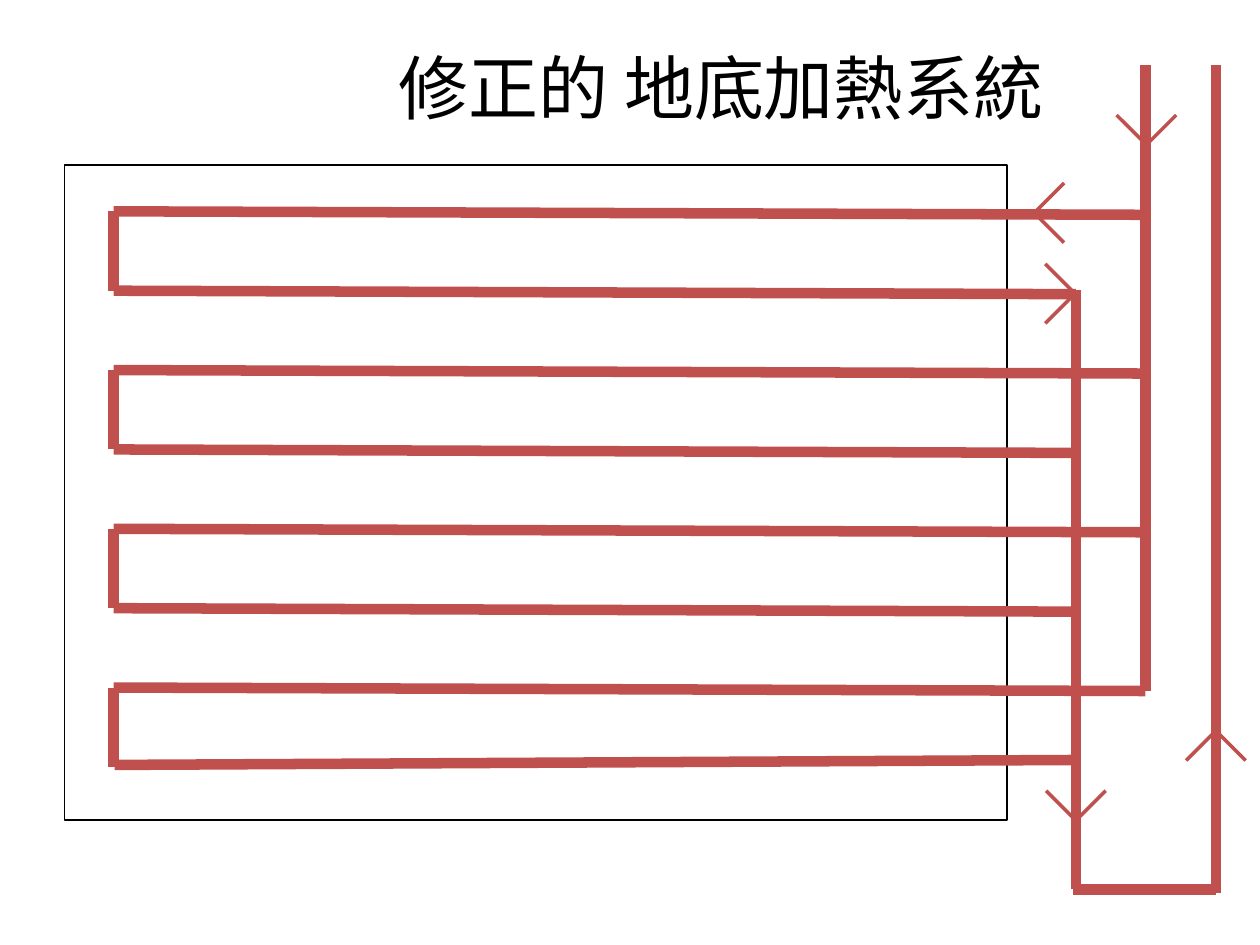
import pptx
import pptx.util
import pptx.dml.color
import pptx.enum.shapes
import pptx.enum.text
import pptx.oxml
import pptx.oxml.ns
from pptx.util import Cm

TITLE = "修正的 地底加熱系統"
FONT = "Noto Sans CJK SC"
HUES = {"pipe": "C0504D", "ink": "000000"}

LEFT, BACK, FEED, RISE = 2.29, 21.69, 23.09, 24.51
TOP, PITCH, DROP, TILT, LOOPS = 4.26, 3.2, 1.6, 0.07, 4
HIGH, LOW = 1.32, 17.93
THICK, THIN, ARM = 6, 2, 0.6

MAINS = [
    (FEED, 13.92, FEED, HIGH),
    (BACK, LOW, BACK, 5.84),
    (RISE, LOW, 21.64, LOW),
    (RISE, 18.01, RISE, HIGH),
]
LAST = (BACK, 15.32, 2.31, 15.42)
ARROWS = [
    (23.11, 2.92, 0, 1),
    (RISE, 14.73, 0, -1),
    (BACK, 16.54, 0, 1),
    (20.85, 4.29, -1, 0),
    (21.67, 5.92, 1, 0),
]

deck = pptx.Presentation()
deck.slide_width, deck.slide_height = Cm(25.4), Cm(19.05)
slide = deck.slides.add_slide(deck.slide_layouts[6])


def tint(name):
    return pptx.dml.color.RGBColor.from_string(HUES[name])


def add_line(x1, y1, x2, y2, width=THICK):
    line = slide.shapes.add_connector(
        pptx.enum.shapes.MSO_CONNECTOR.STRAIGHT, Cm(x1), Cm(y1), Cm(x2), Cm(y2))
    line.line.color.rgb = tint("pipe")
    line.line.width = pptx.util.Pt(width)
    pptx.oxml.ns.qn("a:effectLst")
    line._element.spPr.append(pptx.oxml.parse_xml(
        "<a:effectLst %s/>" % pptx.oxml.ns.nsdecls("a")))


def add_text(text, *, box, size, hue, font):
    frame = slide.shapes.add_textbox(*[Cm(v) for v in box]).text_frame
    frame.word_wrap = True
    frame.vertical_anchor = pptx.enum.text.MSO_ANCHOR.MIDDLE
    para = frame.paragraphs[0]
    para.alignment = pptx.enum.text.PP_ALIGN.CENTER
    run = para.add_run()
    run.text = text
    run.font.size = pptx.util.Pt(size)
    run.font.name = font
    run.font.color.rgb = tint(hue)
    east = pptx.oxml.parse_xml(
        '<a:ea %s typeface="%s"/>' % (pptx.oxml.ns.nsdecls("a"), font))
    run.font._element.append(east)


floor = slide.shapes.add_shape(
    pptx.enum.shapes.MSO_SHAPE.RECTANGLE, Cm(1.3), Cm(3.33), Cm(19), Cm(13.2))
floor.shadow.inherit = False
floor.fill.background()
floor.line.color.rgb = tint("ink")
floor.line.width = pptx.util.Pt(0.75)

for i in range(LOOPS):
    y = TOP + i * PITCH
    end = y + DROP
    add_line(FEED, y + TILT, LEFT, y)
    add_line(LEFT, y, LEFT, end)
    if i < LOOPS - 1:
        add_line(BACK, end + TILT, LEFT, end)
    else:
        add_line(*LAST)

for main in MAINS:
    add_line(*main)

for x, y, dx, dy in ARROWS:
    for side in (-ARM, ARM):
        add_line(x - ARM * dx + side * dy, y - ARM * dy + side * dx, x, y, THIN)

add_text(TITLE, box=(4.95, 0.76, 19.18, 1.96), size=40, hue="ink", font=FONT)

deck.save("out.pptx")
